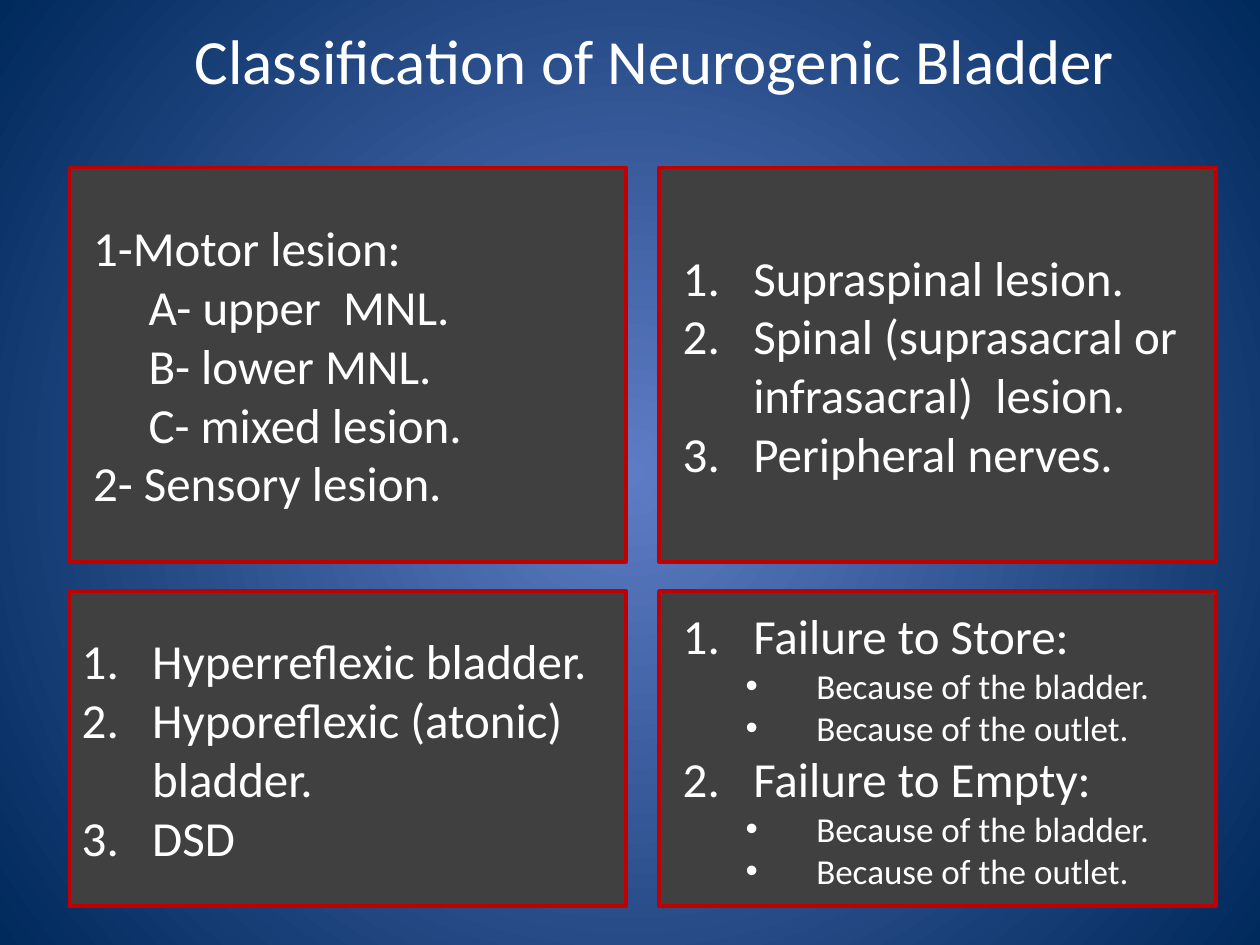
from dataclasses import dataclass

from lxml import etree
from pptx import Presentation
from pptx.dml.color import RGBColor
from pptx.enum.shapes import MSO_SHAPE
from pptx.enum.text import MSO_ANCHOR, PP_ALIGN
from pptx.oxml.ns import qn
from pptx.util import Inches, Pt

RECTANGLE = MSO_SHAPE.RECTANGLE
MIDDLE = MSO_ANCHOR.MIDDLE
LEFT, CENTER = PP_ALIGN.LEFT, PP_ALIGN.CENTER


@dataclass(frozen=True)
class Theme:
    font: str = "Calibri"
    title_size: int = 36
    body_size: int = 28
    detail_size: int = 20
    line_width: int = 2
    text: str = "FFFFFF"
    panel: str = "404040"
    border: str = "C00000"
    glow: str = "5E7CC5"
    edge: str = "00295C"


@dataclass(frozen=True)
class Style:
    """Paragraph look: level, text indent and hanging depth (inches), marker, size."""
    indent: float
    hanging: float
    level: int = 0
    marker: str = ""
    size: int = Theme.body_size


THEME = Theme()
NUMBERED = "number"

PLAIN = Style(0.4, 0.31)
PLAIN_SUB = Style(0.84, 0.31, level=1)
NUMBER_TIGHT = Style(0.56, 0.56, marker=NUMBERED)
NUMBER = Style(0.65, 0.56, marker=NUMBERED)
BULLET = Style(1.15, 0.56, level=1, marker="•", size=THEME.detail_size)

# Panel grid: (start, extent) of each column and row, in inches
COLUMNS = [(0.55, 4.42), (5.23, 4.42)]
ROWS = [(1.33, 3.13), (4.69, 2.5)]

CAUSES = [("Because of the bladder.", BULLET), ("Because of the outlet.", BULLET)]

# (column, row) -> paragraphs
PANELS = {
    (0, 0): [
        ("1-Motor lesion:", PLAIN),
        ("A- upper  MNL.", PLAIN_SUB),
        ("B- lower MNL.", PLAIN_SUB),
        ("C- mixed lesion.", PLAIN_SUB),
        ("2- Sensory lesion.", PLAIN),
    ],
    (1, 0): [
        ("Supraspinal lesion.", NUMBER),
        ("Spinal (suprasacral or infrasacral)  lesion.", NUMBER),
        ("Peripheral nerves.", NUMBER),
    ],
    (0, 1): [
        ("Hyperreflexic bladder.", NUMBER_TIGHT),
        ("Hyporeflexic (atonic) bladder.", NUMBER_TIGHT),
        ("DSD", NUMBER_TIGHT),
    ],
    (1, 1): [
        ("Failure to Store:", NUMBER), *CAUSES,
        ("Failure to Empty:", NUMBER), *CAUSES,
    ],
}


def color(value):
    return RGBColor.from_string(value)


def set_font(paragraph, size):
    paragraph.font.name = THEME.font
    paragraph.font.size = Pt(size)
    paragraph.font.color.rgb = color(THEME.text)


def paint_background(slide):
    """Radial gradient, light in the centre."""
    fill = slide.background.fill
    fill.gradient()
    for stop, value in zip(fill.gradient_stops, (THEME.glow, THEME.edge)):
        stop.color.rgb = color(value)
    gradient = slide.element.find(".//" + qn("a:gradFill"))
    gradient.remove(gradient.find(qn("a:lin")))
    circle = etree.SubElement(gradient, qn("a:path"), {"path": "circle"})
    center = {side: "50000" for side in "ltrb"}
    etree.SubElement(circle, qn("a:fillToRect"), center)


def add_title(slide, text):
    title = slide.shapes.title
    title.left, title.top = Inches(0.62), Inches(0)
    title.width, title.height = Inches(9.15), Inches(0.94)
    frame = title.text_frame
    frame.text = text
    frame.vertical_anchor = MIDDLE
    paragraph = frame.paragraphs[0]
    paragraph.alignment = CENTER
    set_font(paragraph, THEME.title_size)


def set_marker(paragraph, style):
    """Hanging indent, with a number or a bullet where the style has one."""
    properties = paragraph._p.get_or_add_pPr()
    properties.set("marL", str(Inches(style.indent)))
    properties.set("indent", str(-Inches(style.hanging)))
    if not style.marker:
        etree.SubElement(properties, qn("a:buNone"))
        return
    etree.SubElement(properties, qn("a:buFont"), {"typeface": "Arial"})
    if style.marker == NUMBERED:
        etree.SubElement(properties, qn("a:buAutoNum"), {"type": "arabicPeriod"})
    else:
        etree.SubElement(properties, qn("a:buChar"), {"char": style.marker})


def add_panel(slide, column, row, lines):
    (left, width), (top, height) = COLUMNS[column], ROWS[row]
    panel = slide.shapes.add_shape(
        RECTANGLE, Inches(left), Inches(top), Inches(width), Inches(height))
    panel.shadow.inherit = False
    panel.fill.solid()
    panel.fill.fore_color.rgb = color(THEME.panel)
    panel.line.color.rgb = color(THEME.border)
    panel.line.width = Pt(THEME.line_width)

    frame = panel.text_frame
    frame.word_wrap = True
    frame.vertical_anchor = MIDDLE
    for index, (text, style) in enumerate(lines):
        paragraph = frame.add_paragraph() if index else frame.paragraphs[0]
        paragraph.text = text
        paragraph.alignment = LEFT
        paragraph.level = style.level
        set_marker(paragraph, style)
        set_font(paragraph, style.size)


def main():
    presentation = Presentation()
    presentation.slide_width, presentation.slide_height = Inches(10), Inches(7.5)
    title_only = presentation.slide_layouts[5]
    slide = presentation.slides.add_slide(title_only)

    paint_background(slide)
    add_title(slide, "Classification of Neurogenic Bladder")
    for (column, row), lines in PANELS.items():
        add_panel(slide, column, row, lines)

    presentation.save("out.pptx")


if __name__ == "__main__":
    main()
